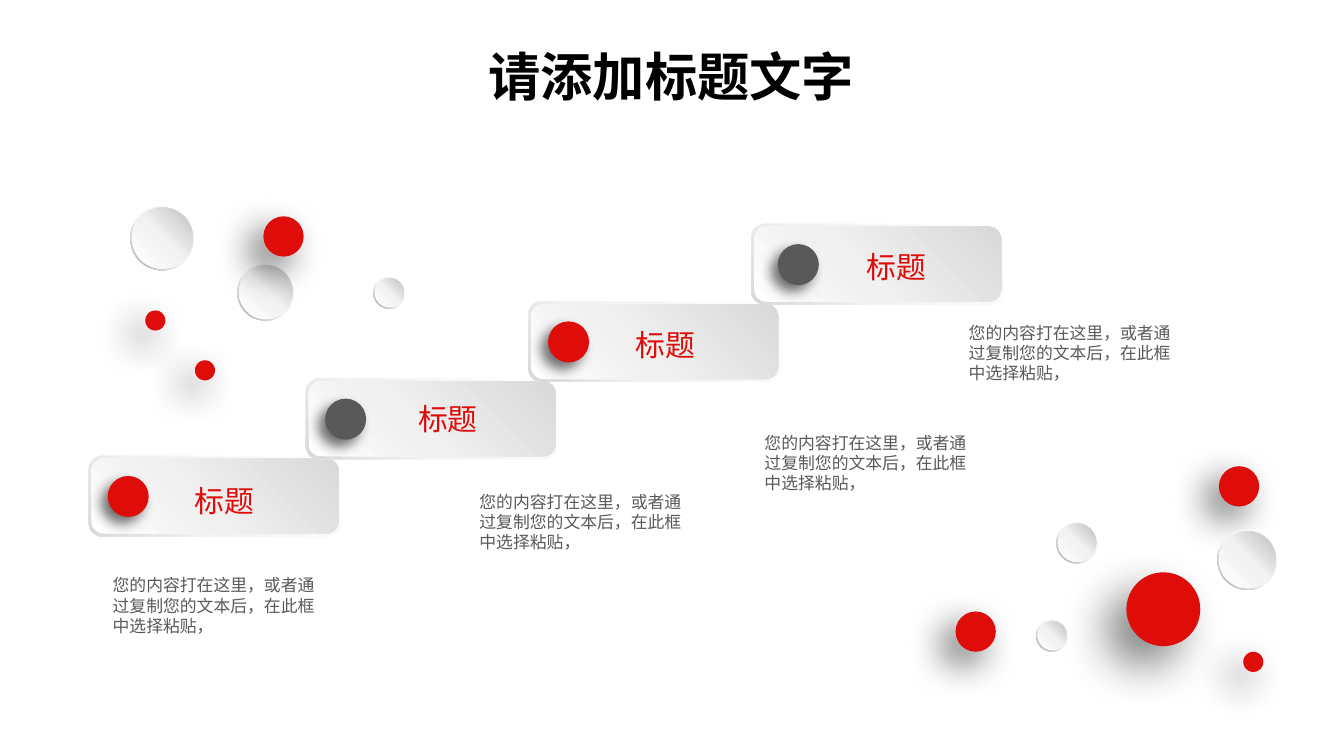
from dataclasses import dataclass

from lxml.etree import SubElement
from pptx import Presentation
from pptx.dml.color import RGBColor
from pptx.enum.shapes import MSO_SHAPE
from pptx.enum.text import MSO_ANCHOR, MSO_AUTO_SIZE, PP_ALIGN
from pptx.oxml import parse_xml
from pptx.oxml.ns import nsdecls, qn
from pptx.util import Pt

RED, GREY, BLACK = "DE0D09", "595959", "000000"
HEAD, BODY = "标题", "您的内容打在这里，或者通过复制您的文本后，在此框中选择粘贴，"

# Gradient stops: (position in percent, colour)
RIM = [(0, "FFFFFF"), (62, "F2F2F2"), (100, "D9D9D9")]
FACE = [(0, "FFFFFF"), (42, "F0F0F0"), (100, "D9D9D9")]
RING = [(0, "FFFFFF"), (55, "F2F2F2"), (100, "A6A6A6")]
DISC = [(0, "FFFFFF"), (51, "F2F2F2"), (100, "BFBFBF")]


@dataclass(frozen=True)
class Shade:
    alpha: int
    blur: float
    dist: float


SMALL, FAR, HUGE = Shade(57, 7, 5), Shade(60, 20, 10), Shade(50, 25, 15)


@dataclass
class Step:
    left: float
    dot: float      # gap from tile edge to dot
    tint: str
    label: tuple    # left, top
    note: tuple     # left, top


@dataclass
class Globe:
    left: float
    top: float
    size: float


@dataclass
class Ball:
    left: float
    top: float
    size: float
    shade: Shade = FAR


STEPS = [
    Step(47.5, 10.2, RED, (97.2, 254.9), (53.3, 304.6)),
    Step(163.8, 10.4, GREY, (216.9, 211), (249.8, 259.9)),
    Step(283, 10.6, RED, (333.4, 171.4), (402.5, 228.2)),
    Step(402.5, 14.2, GREY, (457.2, 129.6), (511.9, 169.2)),
]

# Back to front
DECOR = [
    Globe(69.8, 110.4, 34.4), Ball(603.4, 306.6, 39.6, HUGE),
    Ball(653, 249.8, 21.6), Globe(127.2, 141.4, 30.4),
    Globe(555.1, 331.9, 17.2), Globe(565.9, 279.7, 22.2),
    Ball(141.1, 115.9, 21.6), Ball(77.8, 166.3, 10.8),
    Globe(652.2, 283.8, 32.2), Ball(511.9, 327.6, 21.6),
    Ball(104.4, 193, 10.8), Globe(200, 148.2, 17.2),
    Ball(666, 349.2, 10.8),
]


def tone(code: str) -> RGBColor:
    return RGBColor.from_string(code)


def shape(slide, kind, left: float, top: float, wide: float, high: float):
    item = slide.shapes.add_shape(kind, Pt(left), Pt(top), Pt(wide), Pt(high))
    item.shadow.inherit = False
    item.line.fill.background()
    return item


def blend(item, stops: list, angle: int) -> None:
    marks = "".join(
        f'<a:gs pos="{pos * 1000}"><a:srgbClr val="{code}"/></a:gs>'
        for pos, code in stops)
    grad = parse_xml(
        f'<a:gradFill {nsdecls("a")} rotWithShape="1"><a:gsLst>{marks}</a:gsLst>'
        f'<a:lin ang="{angle * 60000}" scaled="0"/></a:gradFill>')
    item._element.spPr.find(qn("a:prstGeom")).addnext(grad)


def ball(slide, left: float, top: float, size: float, tint: str,
         shade: Shade) -> None:
    item = shape(slide, MSO_SHAPE.OVAL, left, top, size, size)
    item.fill.solid()
    item.fill.fore_color.rgb = tone(tint)
    drop = SubElement(
        item._element.spPr.find(qn("a:effectLst")), qn("a:outerShdw"),
        blurRad=str(int(Pt(shade.blur))), dist=str(int(Pt(shade.dist))),
        dir=str(135 * 60000), algn="ctr", rotWithShape="0")
    black = SubElement(drop, qn("a:srgbClr"), val=BLACK)
    SubElement(black, qn("a:alpha"), val=str(shade.alpha * 1000))


def globe(slide, part: Globe) -> None:
    left, top, size = part.left, part.top, part.size
    ring = shape(slide, MSO_SHAPE.DONUT, left, top, size, size)
    ring.adjustments[0] = 0.05
    blend(ring, RING, 135)
    disc = shape(slide, MSO_SHAPE.OVAL, left + 0.8, top + 0.8,
                 size - 1.6, size - 1.6)
    blend(disc, DISC, 315)


def tile(slide, step: Step, top: float) -> None:
    kind = MSO_SHAPE.ROUNDED_RECTANGLE
    blend(shape(slide, kind, step.left, top, 135.4, 43.2), RIM, 135)
    blend(shape(slide, kind, step.left + 1.5, top + 1.5, 132.4, 40.2), FACE, 315)
    ball(slide, step.left + step.dot, top + 10.8, 22, step.tint, SMALL)


def write(slide, words: str, spot: tuple, area: tuple, size: float, tint: str,
          font: str = "Arial", wrap: bool = True):
    box = slide.shapes.add_textbox(*map(Pt, spot + area))
    frame = box.text_frame
    frame.text = words
    frame.word_wrap = wrap
    frame.auto_size = MSO_AUTO_SIZE.SHAPE_TO_FIT_TEXT
    face = frame.paragraphs[0].runs[0].font
    face.name, face.size, face.color.rgb = font, Pt(size), tone(tint)
    return frame


def title(slide) -> None:
    font = "Noto Sans CJK SC"
    frame = write(slide, "请添加标题文字", (234.7, 9.4), (249.8, 62.6), 28,
                  BLACK, font)
    frame.auto_size = MSO_AUTO_SIZE.NONE
    frame.vertical_anchor = MSO_ANCHOR.MIDDLE
    frame.margin_left = frame.margin_right = Pt(5)
    frame.margin_top = frame.margin_bottom = Pt(2.9)
    line = frame.paragraphs[0]
    line.alignment = PP_ALIGN.CENTER
    face = line.runs[0].font
    face.bold = True
    SubElement(face._element, qn("a:ea"), typeface=font)


def main() -> None:
    deck = Presentation()
    deck.slide_width, deck.slide_height = Pt(720), Pt(405)
    slide = deck.slides.add_slide(deck.slide_layouts[6])

    # Rising tiles with their labels
    for rank, step in enumerate(STEPS):
        tile(slide, step, 244.2 - 41.4 * rank)
    for step in STEPS:
        write(slide, HEAD, step.label, (46.8, 26.6), 16, RED, wrap=False)

    # Scattered globes and balls
    for part in DECOR:
        if isinstance(part, Globe):
            globe(slide, part)
        else:
            ball(slide, part.left, part.top, part.size, RED, part.shade)

    # Notes and title
    for step in STEPS:
        write(slide, BODY, step.note, (123.2, 40.3), 9, GREY)
    title(slide)

    deck.save("out.pptx")


if __name__ == "__main__":
    main()
